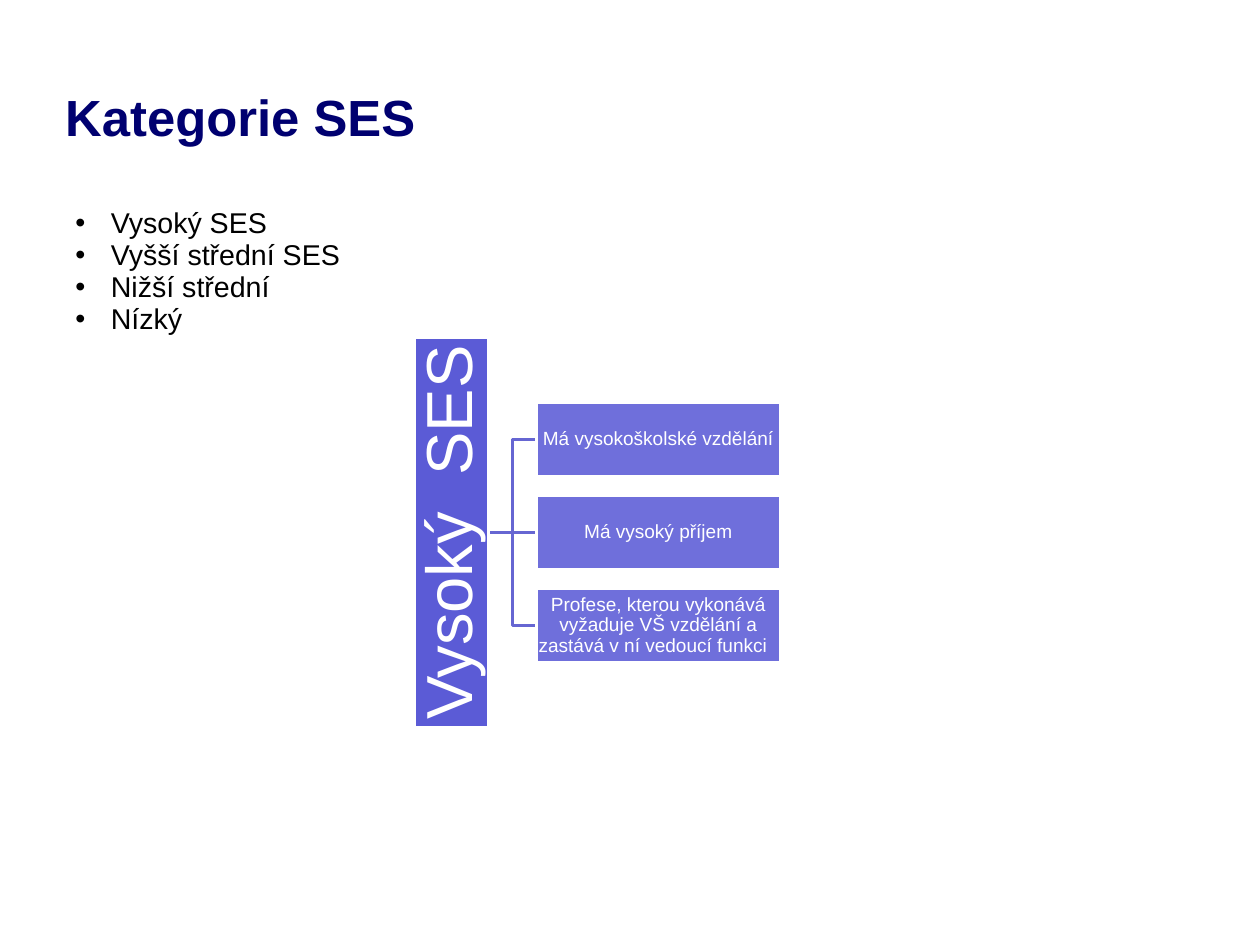
from lxml.etree import SubElement
from pptx import Presentation
from pptx.dml.color import RGBColor
from pptx.enum.shapes import MSO_CONNECTOR as Connector, MSO_SHAPE as Shape
from pptx.enum.text import MSO_ANCHOR as Anchor, MSO_AUTO_SIZE as AutoSize, PP_ALIGN as Align
from pptx.oxml.ns import qn
from pptx.util import Cm, Pt

CATEGORIES = ["Vysoký SES", "Vyšší střední SES", "Nižší střední", "Nízký"]
CRITERIA = [
    "Má vysokoškolské vzdělání",
    "Má vysoký příjem",
    "Profese, kterou vykonává vyžaduje VŠ vzdělání a zastává v ní vedoucí funkci  ",
]
LEFT_SIDE, RIGHT_SIDE = 1, 3


def color(value):
    return RGBColor.from_string(value)


def apply(target, values):
    """Set every attribute named in a dict of format values."""
    for name, value in values.items():
        setattr(target, name, value)


def place(shape, left, top, width, height):
    apply(shape, {"left": Cm(left), "top": Cm(top), "width": Cm(width), "height": Cm(height)})


def margins(size):
    return {f"margin_{side}": Cm(size) for side in ("left", "top", "right", "bottom")}


class SlideBuilder:
    FONT = "Arial"
    NAVY, BLACK, WHITE = "000070", "000000", "FFFFFF"
    BOX, LINE = "3333CC", "6666D2"
    LINE_WIDTH = Pt(2)

    def __init__(self, presentation):
        self.slide = presentation.slides.add_slide(presentation.slide_layouts[1])

    def format_paragraph(self, paragraph, size, text_color, bold=False, spacing=0.93, align=Align.LEFT):
        apply(paragraph, {"alignment": align, "line_spacing": spacing,
                          "space_before": Pt(0), "space_after": Pt(0)})
        apply(paragraph.font, {"name": self.FONT, "size": Pt(size), "bold": bold})
        paragraph.font.color.rgb = color(text_color)

    def title(self, text, *box):
        title = self.slide.shapes.title
        place(title, *box)
        frame = title.text_frame
        frame.text = text
        apply(frame, {"vertical_anchor": Anchor.BOTTOM, "word_wrap": False,
                      "auto_size": AutoSize.NONE, **margins(0)})
        self.format_paragraph(frame.paragraphs[0], 32, self.NAVY, bold=True)

    def bullet(self, paragraph, indent):
        properties = paragraph._p.get_or_add_pPr()
        properties.set("marL", str(Cm(indent)))
        properties.set("indent", str(-Cm(indent)))
        bullet_color = SubElement(properties, qn("a:buClr"))
        SubElement(bullet_color, qn("a:srgbClr"), val=self.BLACK)
        SubElement(properties, qn("a:buFont"), typeface=self.FONT)
        SubElement(properties, qn("a:buChar"), char="•")

    def bullet_list(self, items, *box):
        body = self.slide.placeholders[1]
        place(body, *box)
        frame = body.text_frame
        frame.text = "\n".join(items)
        apply(frame, {"vertical_anchor": Anchor.TOP, "word_wrap": True,
                      "auto_size": AutoSize.SHAPE_TO_FIT_TEXT})
        for paragraph in frame.paragraphs:
            self.bullet(paragraph, 0.79)
            self.format_paragraph(paragraph, 18, self.BLACK)

    def box(self, text, size, opacity, margin, left, top, width, height):
        box = self.slide.shapes.add_shape(
            Shape.RECTANGLE, Cm(left), Cm(top), Cm(width), Cm(height))
        box.shadow.inherit = False
        box.fill.solid()
        box.fill.fore_color.rgb = color(self.BOX)
        fill_color = box.element.spPr.find(f".//{qn('a:srgbClr')}")
        SubElement(fill_color, qn("a:alpha"), val=str(opacity * 1000))
        box.line.color.rgb = color(self.WHITE)
        box.line.width = self.LINE_WIDTH
        frame = box.text_frame
        frame.text = text
        apply(frame, {"vertical_anchor": Anchor.MIDDLE, "word_wrap": True, **margins(margin)})
        self.format_paragraph(frame.paragraphs[0], size, self.WHITE, spacing=0.9, align=Align.CENTER)
        return box

    def upright_box(self, *args):
        """Add a box whose text reads from bottom to top."""
        box = self.box(*args)
        box.text_frame._txBody.bodyPr.set("vert", "vert270")
        return box

    def branch(self, root, leaf, kind):
        """Join root to leaf with a line that lies behind both boxes."""
        line = self.slide.shapes.add_connector(kind, 0, 0, 0, 0)
        line.begin_connect(root, RIGHT_SIDE)
        line.end_connect(leaf, LEFT_SIDE)
        line.line.color.rgb = color(self.LINE)
        line.line.width = self.LINE_WIDTH
        SubElement(line.element.spPr, qn("a:effectLst"))
        root.element.addprevious(line.element)


def main():
    presentation = Presentation()
    apply(presentation, {"slide_width": Cm(28), "slide_height": Cm(21)})
    builder = SlideBuilder(presentation)
    builder.title("Kategorie SES", 1.45, 0.79, 18.9, 2.49)
    builder.bullet_list(CATEGORIES, 1.42, 4.5, 6.58, 3.12)

    thickness, root_height, pitch, middle = 1.65, 8.66, 2.07, 11.83
    root = builder.upright_box("Vysoký  SES", 41, 80, 0.07,
                               9.2, middle - root_height / 2, thickness, root_height)
    for index, criterion in enumerate(CRITERIA):
        offset = index - len(CRITERIA) // 2
        top = middle + offset * pitch - thickness / 2
        leaf = builder.box(criterion, 12, 70, 0.02, 11.92, top, 5.42, thickness)
        builder.branch(root, leaf, Connector.ELBOW if offset else Connector.STRAIGHT)
    presentation.save("out.pptx")


if __name__ == "__main__":
    main()
